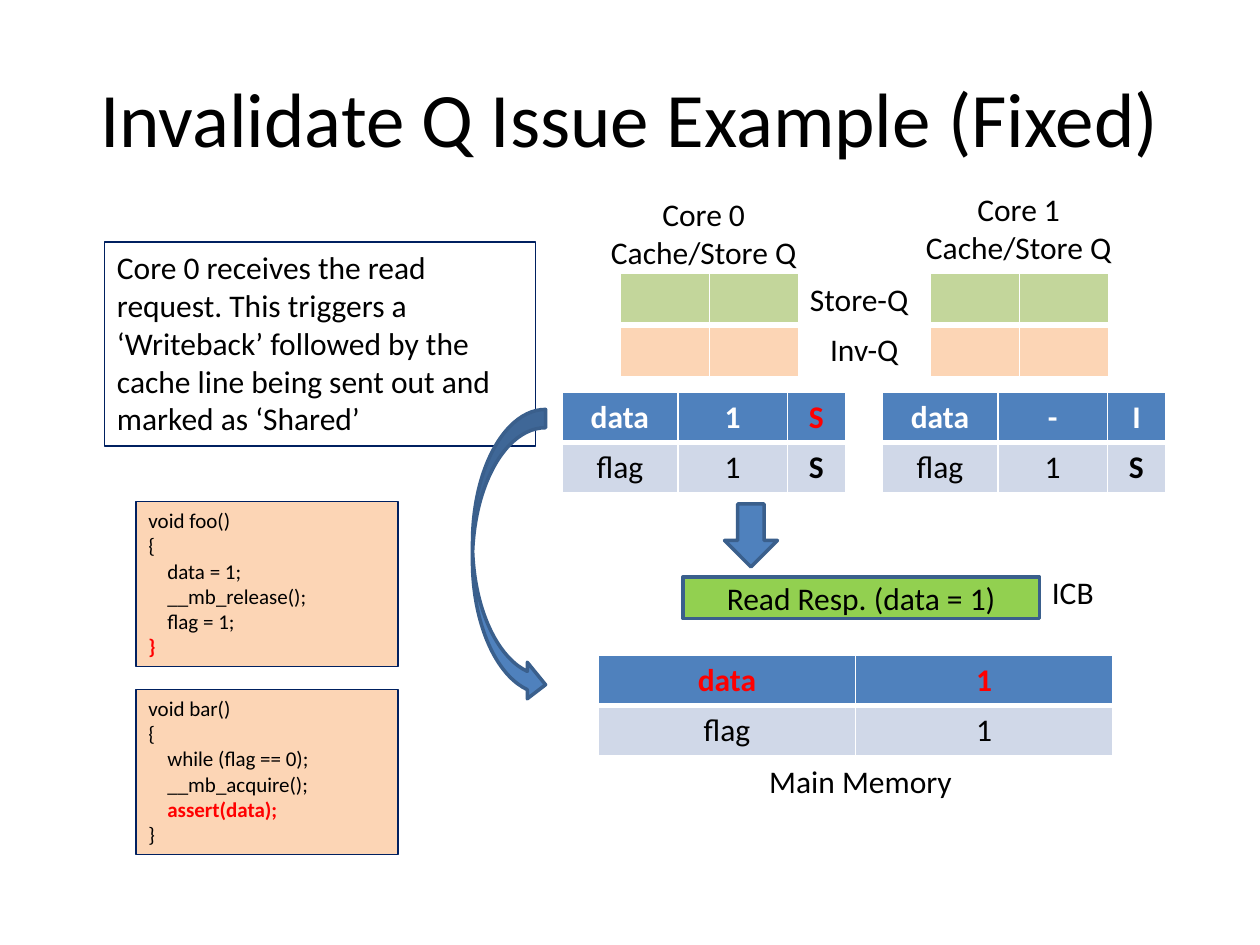
from lxml import etree
from pptx import Presentation, util as u
from pptx.dml.color import RGBColor
from pptx.enum import shapes, text
from pptx.oxml.ns import qn

BLUE, DARK_BLUE, NAVY = "4F81BD", "3A5F8C", "002060"
PALE, GREEN, PEACH, LIME = "D0D8E8", "C3D69B", "FCD5B5", "92D050"
BLACK, WHITE, RED = "000000", "FFFFFF", "FF0000"
LEFT, CENTER = text.PP_ALIGN.LEFT, text.PP_ALIGN.CENTER
TOP, MIDDLE = text.MSO_ANCHOR.TOP, text.MSO_ANCHOR.MIDDLE
MSO = shapes.MSO_SHAPE


def rgb(color):
    return RGBColor.from_string(color)


def write(tf, content, size=18, color=BLACK, bold=False, align=CENTER, marked=None):
    """Write one paragraph a line; a tab indents it, the marked line is bold red."""
    for i, line in enumerate(content.split("\n")):
        p = tf.paragraphs[0] if i == 0 else tf.add_paragraph()
        p.alignment = align
        if line.startswith("\t"):
            p._p.get_or_add_pPr().set("marL", str(u.Inches(0.15)))
        r = p.add_run()
        r.text = line.strip()
        r.font.name, r.font.size = "Calibri", u.Pt(size)
        r.font.bold = bold or i == marked
        r.font.color.rgb = rgb(RED if i == marked else color)


prs = Presentation()
prs.slide_width, prs.slide_height = u.Inches(10), u.Inches(7.5)
s = prs.slides.add_slide(prs.slide_layouts[6])

# Labels: text, position, wrap, size, anchor, alignment
labels = [
    ("Invalidate Q Issue Example (Fixed)", (0.5, 0.3, 9, 1.25), True, 44, MIDDLE, CENTER),
    ("Core 0 Cache/Store Q", (4.67, 1.5, 1.83, 0.71), True, 18, TOP, CENTER),
    ("Core 1 Cache/Store Q", (7.17, 1.46, 1.83, 0.71), True, 18, TOP, CENTER),
    ("Main Memory", (5.62, 6, 2.42, 0.4), True, 18, TOP, CENTER),
    ("Store-Q", (6.33, 2.17, 0.99, 0.4), False, 18, TOP, LEFT),
    ("Inv-Q", (6.49, 2.57, 0.76, 0.4), False, 18, TOP, LEFT),
    ("ICB", (8.25, 4.5, 0.54, 0.4), False, 18, TOP, LEFT),
]
for label, box, wrap, size, anchor, align in labels:
    tf = s.shapes.add_textbox(*map(u.Inches, box)).text_frame
    tf.word_wrap, tf.vertical_anchor = wrap, anchor
    write(tf, label, size=size, align=align)

# Tables: left, top, column widths, rows of (fill, cells of (text, color, bold))
flag_row = [("flag", BLACK, False), ("1", BLACK, False)]
core_flag_row = flag_row + [("S", BLACK, True)]
core_cols = (0.92, 0.87, 0.46)
tables = [
    (4.46, 3.11, core_cols, [
        (BLUE, [("data", WHITE, True), ("1", WHITE, True), ("S", RED, True)]),
        (PALE, core_flag_row)]),
    (7, 3.11, core_cols, [
        (BLUE, [("data", WHITE, True), ("-", WHITE, True), ("I", WHITE, True)]),
        (PALE, core_flag_row)]),
    (4.75, 5.2, (2.04, 2.04), [
        (BLUE, [("data", RED, True), ("1", RED, True)]),
        (PALE, flag_row)]),
]
for left in (4.92, 7.38):
    for top, fill in ((2.17, GREEN), (2.6, PEACH)):
        tables.append((left, top, (0.71, 0.71), [(fill, [("", BLACK, False)] * 2)]))

for left, top, cols, rows in tables:
    row_height = 0.4
    frame = s.shapes.add_table(len(rows), len(cols), u.Inches(left), u.Inches(top),
                               u.Inches(sum(cols)), u.Inches(row_height * len(rows)))
    tbl = frame.table
    tbl.first_row = tbl.horz_banding = False
    for column, width in zip(tbl.columns, cols):
        column.width = u.Inches(width)
    for i, (fill, cells) in enumerate(rows):
        for j, (value, color, bold) in enumerate(cells):
            cell = tbl.cell(i, j)
            tcPr = cell._tc.get_or_add_tcPr()
            for side in ("lnL", "lnR", "lnT", "lnB"):
                header_edge = (i == 0 and side == "lnB") or (i == 1 and side == "lnT")
                ln = etree.SubElement(tcPr, qn("a:" + side), w=str(u.Pt(3 if header_edge else 1)))
                line_fill = etree.SubElement(ln, qn("a:solidFill"))
                etree.SubElement(line_fill, qn("a:srgbClr"), val=WHITE)
            cell.fill.solid()
            cell.fill.fore_color.rgb = rgb(fill)
            if value:
                write(cell.text_frame, value, color=color, bold=bold)

# Shapes: kind, position, fill, line color, line width, anchor, text, text format
note = ("Core 0 receives the read request. This triggers a ‘Writeback’ followed by "
        "the cache line being sent out and marked as ‘Shared’")
foo = "void foo()\n{\n\tdata = 1;\n\t__mb_release();\n\tflag = 1;\n}"
bar = "void bar()\n{\n\twhile (flag == 0);\n\t__mb_acquire();\n\tassert(data);\n}"
blocks = [
    (MSO.RECTANGLE, (0.83, 1.92, 3.42, 1.62), None, NAVY, 0.75, TOP, note, dict(align=LEFT)),
    (MSO.RECTANGLE, (5.42, 4.58, 2.83, 0.33), LIME, DARK_BLUE, 2, MIDDLE,
     "Read Resp. (data = 1)", {}),
    (MSO.RECTANGLE, (1.08, 3.98, 2.08, 1.31), PEACH, NAVY, 0.75, TOP, foo,
     dict(size=12, align=LEFT, marked=5)),
    (MSO.RECTANGLE, (1.08, 5.47, 2.08, 1.31), PEACH, NAVY, 0.75, TOP, bar,
     dict(size=12, align=LEFT, marked=4)),
    (MSO.DOWN_ARROW, (5.75, 4, 0.42, 0.5), BLUE, DARK_BLUE, 2, MIDDLE, "", {}),
    (MSO.CURVED_RIGHT_ARROW, (3.75, 3.25, 0.58, 2.33), BLUE, DARK_BLUE, 2, MIDDLE, "", {}),
]
for kind, box, fill, line, width, anchor, content, style in blocks:
    sp = s.shapes.add_shape(kind, *map(u.Inches, box))
    sp.shadow.inherit = False
    if fill:
        sp.fill.solid()
        sp.fill.fore_color.rgb = rgb(fill)
    else:
        sp.fill.background()
    sp.line.color.rgb = rgb(line)
    sp.line.width = u.Pt(width)
    tf = sp.text_frame
    tf.word_wrap, tf.vertical_anchor = True, anchor
    if content:
        write(tf, content, **style)

prs.save("out.pptx")
